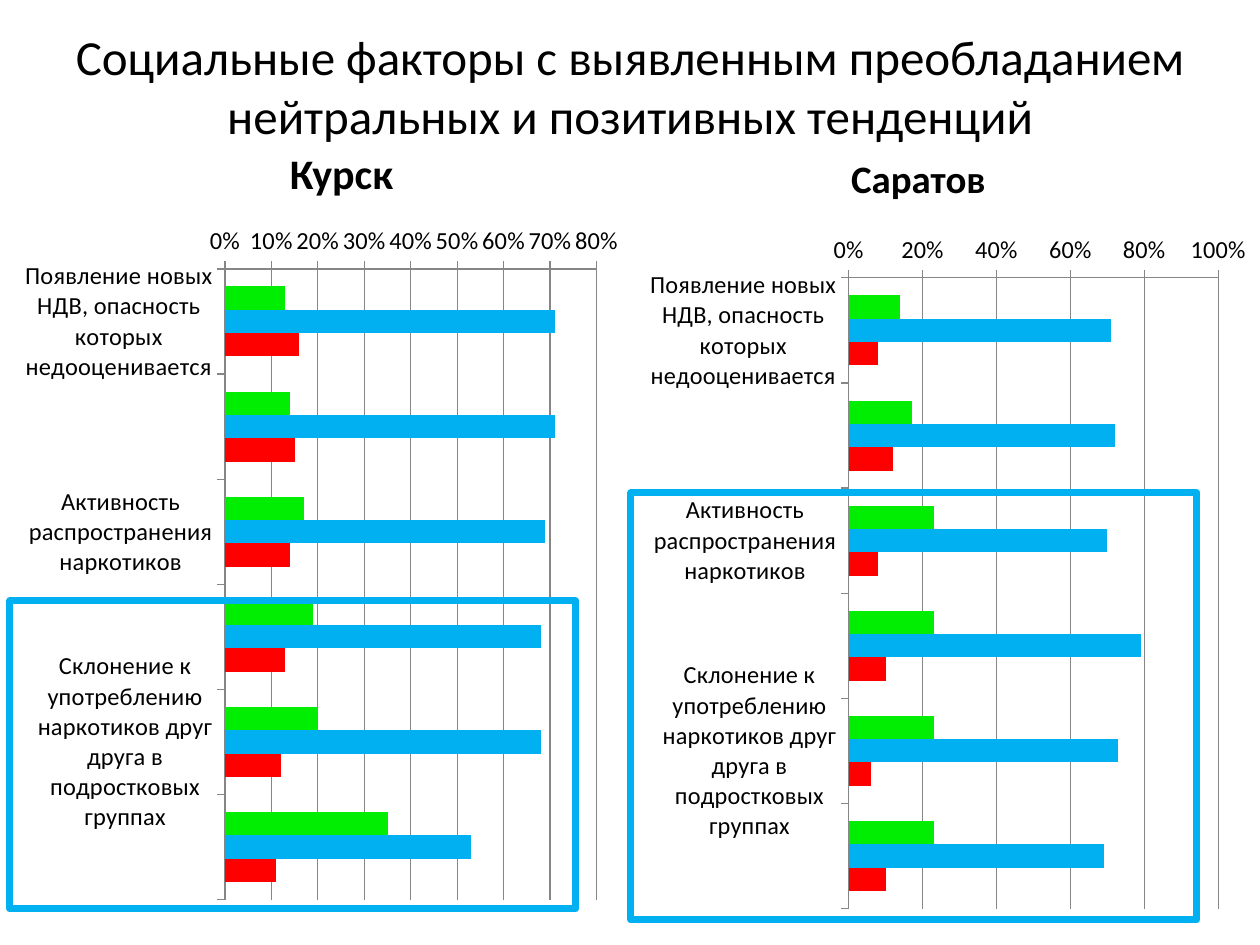
from lxml import etree
from pptx import Presentation
from pptx.chart.data import CategoryChartData
from pptx.dml.color import RGBColor
from pptx.enum.chart import XL_CHART_TYPE, XL_TICK_LABEL_POSITION, XL_TICK_MARK
from pptx.enum.shapes import MSO_SHAPE
from pptx.enum.text import MSO_ANCHOR, PP_ALIGN
from pptx.oxml.ns import qn
from pptx.util import Pt

BAR = XL_CHART_TYPE.BAR_CLUSTERED
NEXT_TO_AXIS = XL_TICK_LABEL_POSITION.NEXT_TO_AXIS
OUTSIDE, NO_TICK = XL_TICK_MARK.OUTSIDE, XL_TICK_MARK.NONE
RECT = MSO_SHAPE.RECTANGLE
MIDDLE, BOTTOM = MSO_ANCHOR.MIDDLE, MSO_ANCHOR.BOTTOM
CENTER = PP_ALIGN.CENTER

FONT = "Calibri"
BLACK, GREY, BLUE = "000000", "868686", "00B0F0"
SERIES_COLORS = ["01ED01", BLUE, "FF0000"]


def px(*lengths):
    """Turn pixels (126 to the inch) into EMU."""
    return [round(n * 914400 / 126) for n in lengths]


def rgb(color):
    return RGBColor.from_string(color)


prs = Presentation()
prs.slide_width, prs.slide_height = px(1260, 945)
s = prs.slides.add_slide(prs.slide_layouts[6])

# Title and city headings
headings = [
    ("Социальные факторы с выявленным преобладанием нейтральных и позитивных тенденций",
     (15, 6, 1230, 158), MIDDLE, {"size": Pt(28), "bold": False}),
    ("Курск", (63, 145, 557, 59), BOTTOM, {"size": Pt(24), "bold": True}),
    ("Саратов", (640, 155, 557, 53), BOTTOM, {"size": Pt(22.2), "bold": True}),
]
for text, box, anchor, font in headings:
    tf = s.shapes.add_textbox(*px(*box)).text_frame
    tf.word_wrap = True
    tf.vertical_anchor = anchor
    p = tf.paragraphs[0]
    p.alignment = CENTER
    r = p.add_run()
    r.text = text
    for name, value in font.items():
        setattr(r.font, name, value)
    r.font.name = FONT
    r.font.color.rgb = rgb(BLACK)

# One bar chart per city; every second factor is unlabelled
factors = [
    "Появление новых НДВ, опасность которых недооценивается",
    "",
    "Активность распространения наркотиков",
    "",
    "Склонение к употреблению наркотиков друг друга в подростковых группах",
    "",
]
charts = [
    ((25, 195, 596, 725), 0.8, 0.1, [
        [0.13, 0.14, 0.17, 0.19, 0.2, 0.35],
        [0.71, 0.71, 0.69, 0.68, 0.68, 0.53],
        [0.16, 0.15, 0.14, 0.13, 0.12, 0.11]]),
    ((650, 204, 596, 725), 1, 0.2, [
        [0.14, 0.17, 0.23, 0.23, 0.23, 0.23],
        [0.71, 0.72, 0.7, 0.79, 0.73, 0.69],
        [0.08, 0.12, 0.08, 0.1, 0.06, 0.1]]),
]
plot_layout = {"layoutTarget": "inner", "xMode": "edge", "yMode": "edge",
               "x": 0.333, "y": 0.102, "w": 0.626, "h": 0.87}

for box, maximum, step, rows in charts:
    data = CategoryChartData(number_format="0%")
    data.categories = factors
    for number, row in enumerate(rows, 1):
        data.add_series(f"Series {number}", row)
    chart = s.shapes.add_chart(BAR, *px(*box), data).chart
    chart.has_legend = False
    chart.has_title = False
    chart.font.name = FONT
    chart.font.size = Pt(14)
    chart.font.color.rgb = rgb(BLACK)

    plot = chart.plots[0]
    plot.gap_width = 150
    plot.overlap = 0
    plot.vary_by_categories = False
    for series, color in zip(plot.series, SERIES_COLORS):
        series.format.fill.solid()
        series.format.fill.fore_color.rgb = rgb(color)

    cat, val = chart.category_axis, chart.value_axis
    cat.reverse_order = True
    val.minimum_scale, val.maximum_scale, val.major_unit = 0, maximum, step
    val.has_major_gridlines = True
    val.tick_labels.number_format = "0%"
    val.tick_labels.number_format_is_linked = False
    for axis in (cat, val):
        axis.major_tick_mark = OUTSIDE
        axis.minor_tick_mark = NO_TICK
        axis.tick_label_position = NEXT_TO_AXIS
    for line in (cat.format.line, val.format.line, val.major_gridlines.format.line):
        line.color.rgb = rgb(GREY)
        line.width = Pt(0.75)

    area = chart.element.find(".//" + qn("c:plotArea"))
    for old in area.findall(qn("c:layout")):
        area.remove(old)
    layout = etree.Element(qn("c:layout"))
    area.insert(0, layout)
    manual = etree.SubElement(layout, qn("c:manualLayout"))
    for name, value in plot_layout.items():
        etree.SubElement(manual, qn("c:" + name)).set("val", str(value))

# Frames around the highlighted factors
for box in [(10, 601, 566, 308), (631, 493, 566, 427)]:
    sp = s.shapes.add_shape(RECT, *px(*box))
    sp.shadow.inherit = False
    sp.fill.background()
    sp.line.color.rgb = rgb(BLUE)
    sp.line.width = Pt(4)

prs.save("out.pptx")
